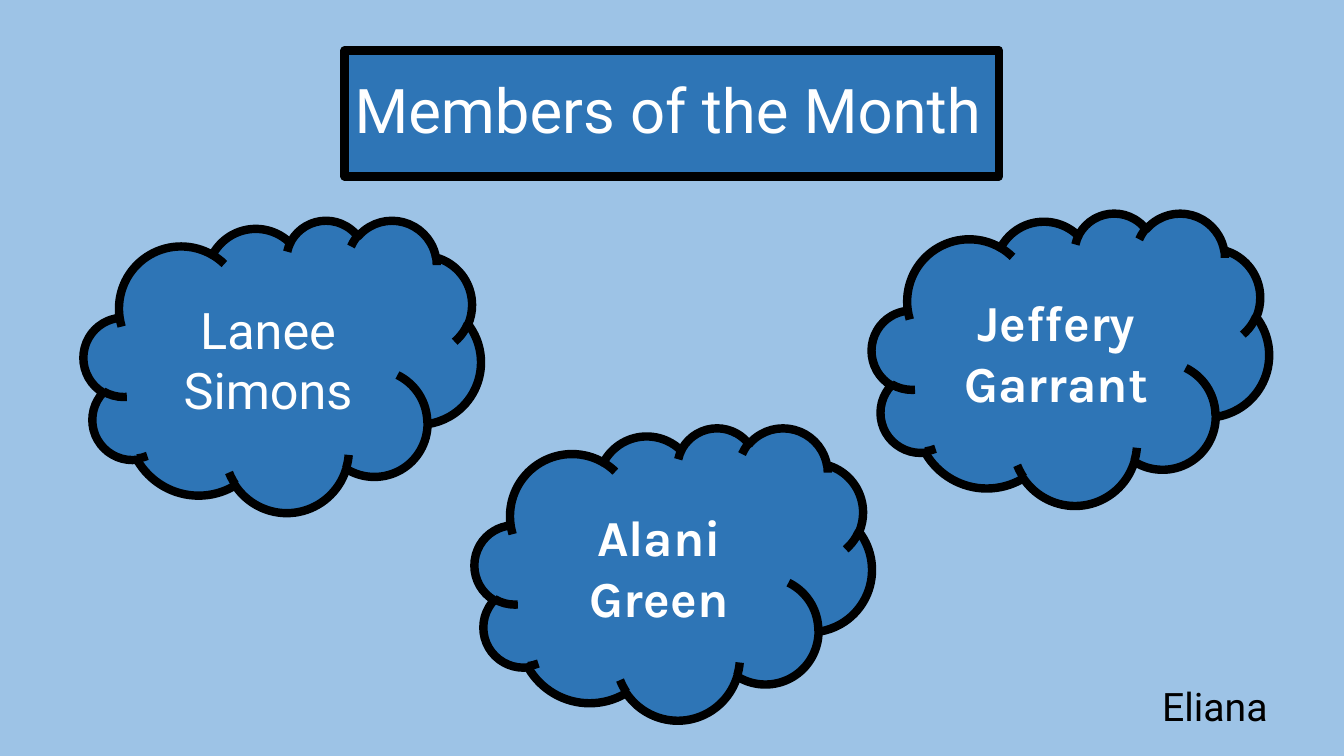
from pptx import Presentation
from pptx.dml.color import RGBColor
from pptx.enum.shapes import MSO_SHAPE
from pptx.enum.text import MSO_ANCHOR, PP_ALIGN
from pptx.util import Pt

RECTANGLE = MSO_SHAPE.RECTANGLE
CLOUD = MSO_SHAPE.CLOUD
TOP = MSO_ANCHOR.TOP
MIDDLE = MSO_ANCHOR.MIDDLE
LEFT = PP_ALIGN.LEFT
CENTER = PP_ALIGN.CENTER

SKY = "9DC3E6"
BLUE = "2E75B6"
BLACK = "000000"
WHITE = "FFFFFF"


def color(value):
    return RGBColor.from_string(value)


def write_text(shape, text, *, size, font="Roboto", fill=WHITE, bold=False,
               align=LEFT, anchor=TOP, spacing=1.0):
    frame = shape.text_frame
    frame.word_wrap = True
    frame.vertical_anchor = anchor
    paragraph = frame.paragraphs[0]
    paragraph.alignment = align
    paragraph.line_spacing = spacing
    run = paragraph.add_run()
    run.text = text
    run.font.name = font
    run.font.size = Pt(size)
    run.font.bold = bold
    run.font.color.rgb = color(fill)


class MemberSlide:
    fill = BLUE
    outline = BLACK
    outline_width = 6
    cloud_width = 283.7
    cloud_height = 208.8

    def __init__(self, presentation):
        self.slide = presentation.slides.add_slide(presentation.slide_layouts[6])
        background = self.slide.background.fill
        background.solid()
        background.fore_color.rgb = color(SKY)

    def panel(self, kind, left, top, width, height):
        shape = self.slide.shapes.add_shape(
            kind, Pt(left), Pt(top), Pt(width), Pt(height))
        shape.shadow.inherit = False
        shape.fill.solid()
        shape.fill.fore_color.rgb = color(self.fill)
        shape.line.color.rgb = color(self.outline)
        shape.line.width = Pt(self.outline_width)
        return shape

    def label(self, text, left, top, width, height, **style):
        box = self.slide.shapes.add_textbox(
            Pt(left), Pt(top), Pt(width), Pt(height))
        write_text(box, text, **style)

    def member(self, name, left, top, **style):
        cloud = self.panel(CLOUD, left, top, self.cloud_width, self.cloud_height)
        write_text(cloud, name, size=36, align=CENTER, anchor=MIDDLE, **style)


def main():
    presentation = Presentation()
    presentation.slide_width = Pt(960)
    presentation.slide_height = Pt(540)

    page = MemberSlide(presentation)
    page.panel(RECTANGLE, 246.2, 36, 467.3, 90)
    page.label("Members of the Month", 246.2, 42.5, 500.4, 77,
               size=44, anchor=MIDDLE, spacing=0.9)
    page.label("Eliana", 823, 483.8, 149.8, 41, size=28, fill=BLACK)
    page.member("Jeffery Garrant", 622.8, 151.9, font="Karla", bold=True)
    page.member("Lanee Simons", 59.8, 157)
    page.member("Alani Green", 339.1, 305.3, font="Karla", bold=True)

    presentation.save("out.pptx")


if __name__ == "__main__":
    main()
